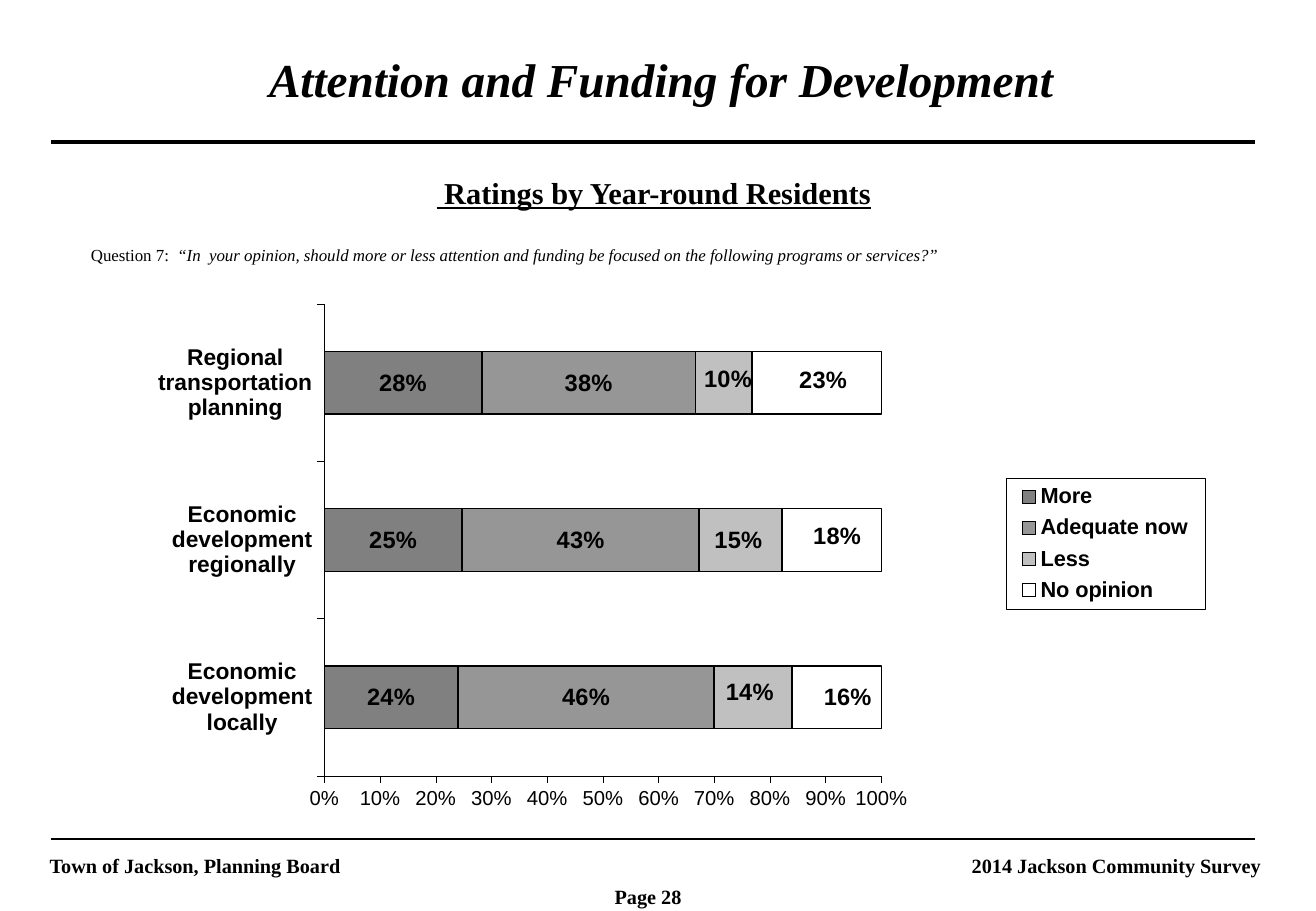
from pptx import Presentation
from pptx.chart.data import CategoryChartData
from pptx.dml.color import RGBColor
from pptx.enum import chart as ch, shapes, text
from pptx.oxml import parse_xml
from pptx.oxml.ns import nsdecls, qn
from pptx.util import Inches, Pt


class Theme:
    serif, sans = "Times New Roman", "Arial"
    black = RGBColor(0, 0, 0)
    title, subtitle, footer, question = 28, 18, 12, 10
    category, value, legend, label = 13.5, 12, 12.9, 14


def style(font, name, size, bold=False, italic=False):
    font.name, font.size, font.bold, font.italic = name, Pt(size), bold, italic
    font.color.rgb = Theme.black


def place(parent, index, **fields):
    """Insert a manual chart layout as the given child of parent."""
    for old in parent.findall(qn("c:layout")):
        parent.remove(old)
    items = "".join(f'<c:{k} val="{v}"/>' for k, v in fields.items())
    parent.insert(index, parse_xml(
        f'<c:layout {nsdecls("c")}><c:manualLayout>{items}</c:manualLayout></c:layout>'))


prs = Presentation()
prs.slide_width, prs.slide_height = Inches(10.83), Inches(7.5)
s = prs.slides.add_slide(prs.slide_layouts[5])

# Rules under the title and above the footer
for y, width in ((1.17, 2), (6.91, 1)):
    rule = s.shapes.add_connector(shapes.MSO_CONNECTOR.STRAIGHT,
                                  Inches(0.42), Inches(y), Inches(10.33), Inches(y))
    rule.line.color.rgb = Theme.black
    rule.line.width = Pt(width)
    rule._element.spPr.append(parse_xml(f'<a:effectLst {nsdecls("a")}/>'))

# Title, subtitle and footer
left, center, right = text.PP_ALIGN.LEFT, text.PP_ALIGN.CENTER, text.PP_ALIGN.RIGHT
headings = [
    ("Attention and Funding for Development", (0.48, 0.42, 9.92, 0.52), Theme.title, center),
    (" Ratings by Year-round Residents", (0.42, 1.42, 9.92, 0.37), Theme.subtitle, center),
    ("Town of Jackson, Planning Board", (0.31, 7, 3.92, 0.28), Theme.footer, left),
    ("2014 Jackson Community Survey", (6.81, 7, 3.67, 0.28), Theme.footer, right),
    ("Page 28", (4.96, 7.25, 0.92, 0.28), Theme.footer, left),
]
for words, box, size, align in headings:
    is_title = size == Theme.title
    sp = s.shapes.title if is_title else s.shapes.add_textbox(0, 0, 0, 0)
    sp.left, sp.top, sp.width, sp.height = map(Inches, box)
    tf = sp.text_frame
    tf.text = words
    tf.word_wrap = True
    tf.auto_size = text.MSO_AUTO_SIZE.NONE
    tf.vertical_anchor = text.MSO_ANCHOR.TOP
    p = tf.paragraphs[0]
    p.alignment, p.line_spacing = align, 0.9
    r = p.runs[0]
    style(r.font, Theme.serif, size, bold=True, italic=is_title)
    r.font.underline = size == Theme.subtitle

# Survey question
sp = s.shapes.add_textbox(Inches(0.65), Inches(1.98), Inches(9.08), Inches(0.25))
sp.text_frame.word_wrap = True
p = sp.text_frame.paragraphs[0]
p.line_spacing = 0.9
question = ("  “In  your opinion, should more or less attention and funding be focused "
            "on the following programs or services?”")
for words, italic in (("Question 7:", False), (question, True)):
    r = p.add_run()
    r.text = words
    style(r.font, Theme.serif, Theme.question, italic=italic)

# Ratings chart: name, values, colour, label shifts as fractions of the chart
ratings = [
    ("More", (0.24, 0.25, 0.28), "808080", ()),
    ("Adequate now", (0.46, 0.43, 0.38), "969696", ()),
    ("Less", (0.14, 0.15, 0.10), "C0C0C0", ((-0.003, -0.009), (-0.002, 0), (0.004, -0.007))),
    ("No opinion", (0.16, 0.18, 0.23), "FFFFFF", ((0.01, 0), (0.005, -0.007), (0.006, -0.004))),
]
data = CategoryChartData(number_format="0%")
data.categories = ["Economic development locally", "Economic development regionally",
                   "Regional transportation planning"]
for name, values, _, _ in ratings:
    data.add_series(name, values)
chart = s.shapes.add_chart(ch.XL_CHART_TYPE.BAR_STACKED_100, Inches(0.93), Inches(2.37),
                           Inches(9.06), Inches(4.51), data).chart
chart.has_title = False
style(chart.font, Theme.sans, Theme.label, bold=True)
plot = chart.plots[0]
plot.gap_width, plot.overlap, plot.vary_by_categories = 150, 100, False
place(chart._chartSpace.chart.plotArea, 0, layoutTarget="inner", xMode="edge", yMode="edge",
      x=0.192, y=0.03, w=0.506, h=0.861)

for series, (_, _, color, shifts) in zip(plot.series, ratings):
    series.format.fill.solid()
    series.format.fill.fore_color.rgb = RGBColor.from_string(color)
    series.format.line.color.rgb = Theme.black
    series.format.line.width = Pt(1)
    labels = series.data_labels
    labels.show_value = True
    labels.number_format, labels.number_format_is_linked = "0%", False
    style(labels.font, Theme.sans, Theme.label, bold=True)
    for i, (dx, dy) in enumerate(shifts):
        label = series.points[i].data_label
        style(label.font, Theme.sans, Theme.label, bold=True)
        label.position = ch.XL_LABEL_POSITION.CENTER
        place(series._element.xpath(f"c:dLbls/c:dLbl[c:idx/@val={i}]")[0], 1, x=dx, y=dy)

for axis, size, bold in ((chart.category_axis, Theme.category, True),
                         (chart.value_axis, Theme.value, False)):
    axis.has_major_gridlines = False
    axis.major_tick_mark = ch.XL_TICK_MARK.OUTSIDE
    axis.format.line.color.rgb = Theme.black
    axis.format.line.width = Pt(0.25)
    style(axis.tick_labels.font, Theme.sans, size, bold=bold)
axis = chart.value_axis
axis.minimum_scale, axis.maximum_scale, axis.major_unit = 0, 1, 0.1
axis.tick_labels.number_format, axis.tick_labels.number_format_is_linked = "0%", False

chart.has_legend = True
legend = chart.legend
legend.position = ch.XL_LEGEND_POSITION.RIGHT
legend.include_in_layout = False
style(legend.font, Theme.sans, Theme.legend, bold=True)
place(legend._element, 1, xMode="edge", yMode="edge", x=0.811, y=0.347, w=0.181, h=0.24)
legend._element.find(qn("c:txPr")).addprevious(parse_xml(
    f'<c:spPr {nsdecls("c", "a")}><a:ln w="3175"><a:solidFill>'
    f'<a:srgbClr val="{Theme.black}"/></a:solidFill></a:ln></c:spPr>'))

prs.save("out.pptx")
